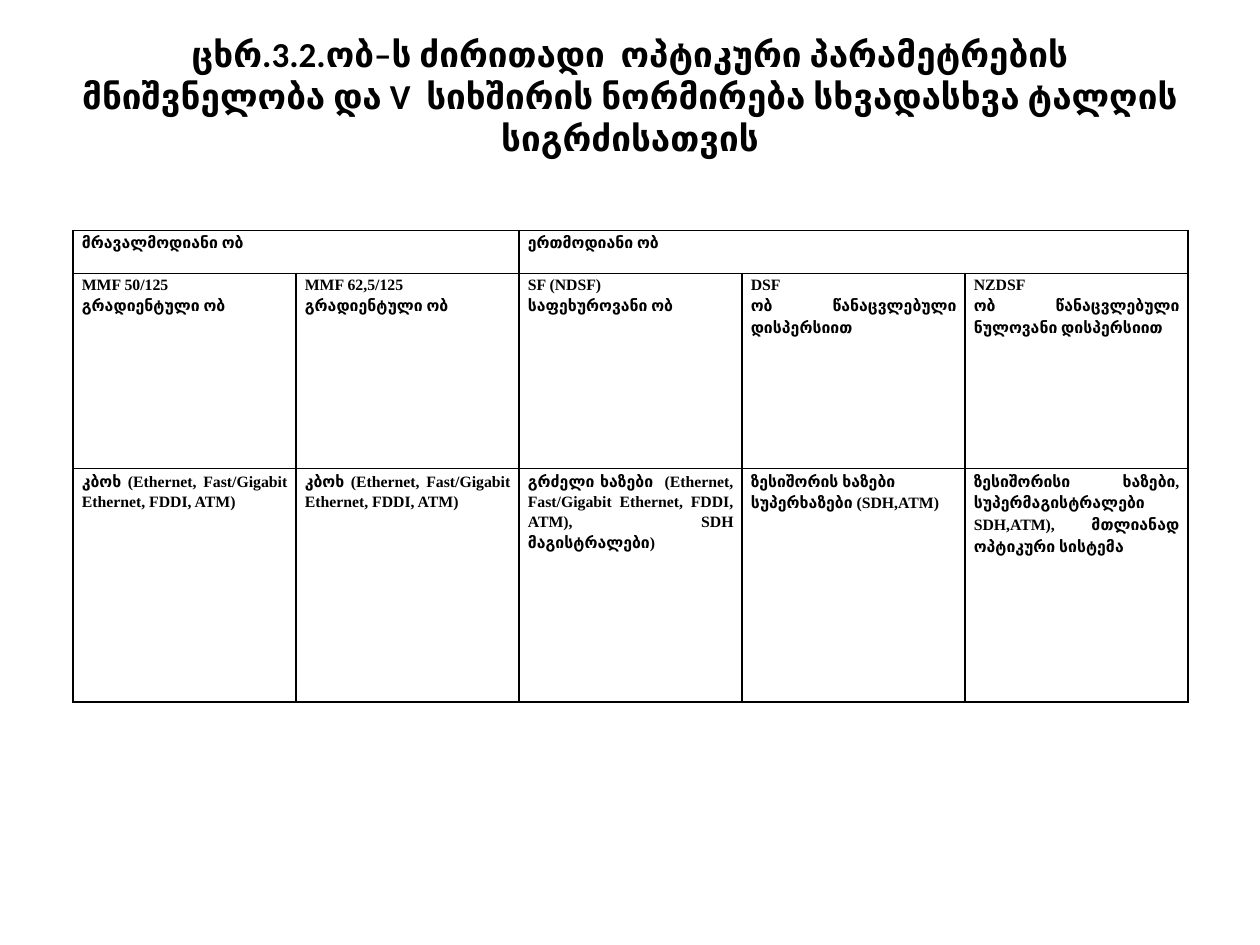
from lxml import etree
from pptx import Presentation
from pptx.dml.color import RGBColor
from pptx.enum.text import MSO_ANCHOR as Anchor, PP_ALIGN as Align
from pptx.oxml.ns import qn
from pptx.util import Inches, Pt

TITLE = ("ცხრ.3.2.ობ–ს ძირითადი  ოპტიკური პარამეტრების მნიშვნელობა "
         "და V  სიხშირის ნორმირება სხვადასხვა ტალღის სიგრძისათვის")

# Each cell is a list of paragraphs, each paragraph a list of spans
NETWORKS = " (Ethernet, Fast/Gigabit Ethernet, FDDI, ATM)"
GRADED = ["გრადიენტული ობ"]
LOCAL_USE = [["კბოხ", NETWORKS]]
GROUPS = [(0, 1, "მრავალმოდიანი ობ"), (2, 4, "ერთმოდიანი ობ")]
FIBRES = [
    [["MMF 50/125"], GRADED],
    [["MMF 62,5/125"], GRADED],
    [["SF (NDSF)"], ["საფეხუროვანი ობ"]],
    [["DSF"], ["ობ წანაცვლებული დისპერსიით"]],
    [["NZDSF"], ["ობ წანაცვლებული ნულოვანი დისპერსიით"]],
]
USES = [
    LOCAL_USE,
    LOCAL_USE,
    [["გრძელი ხაზები ", NETWORKS + ",  SDH ", "მაგისტრალები", ")"]],
    [["ზესიშორის ხაზები"], ["სუპერხაზები", " (SDH,ATM)"]],
    [["ზესიშორისი ხაზები", ",\n", "სუპერმაგისტრალები ", "SDH,ATM), ",
      "მთლიანად ოპტიკური სისტემა"]],
]
COLUMN_WIDTH = 1.77
ROW_HEIGHTS = [0.34, 1.55, 1.85]


def colour(value):
    return RGBColor.from_string(value)


class SlideBuilder:
    ink = "000000"
    title_font = "Calibri"
    georgian_font = "Lato"
    latin_font = "Times New Roman"

    def __init__(self, deck):
        self.page = deck.slides.add_slide(deck.slide_layouts[5])

    def span(self, para, text, font, size):
        span = para.add_run()
        span.text = text
        for name, value in {"name": font, "size": Pt(size), "bold": True}.items():
            setattr(span.font, name, value)
        span.font.color.rgb = colour(self.ink)

    def title(self, text, left, top, width, height):
        box = self.page.shapes.title
        place = {"left": left, "top": top, "width": width, "height": height}
        for name, value in place.items():
            setattr(box, name, Inches(value))
        frame = box.text_frame
        frame.word_wrap = True
        frame.vertical_anchor = Anchor.MIDDLE
        frame.margin_bottom = Inches(0.38)
        para = frame.paragraphs[0]
        para.alignment = Align.CENTER
        self.span(para, text, self.title_font, 20)

    def table(self, left, top, columns, column_width, heights):
        table = self.page.shapes.add_table(
            len(heights), columns, Inches(left), Inches(top),
            Inches(columns * column_width), Inches(sum(heights))).table
        table.first_row = table.horz_banding = False
        for column in table.columns:
            column.width = Inches(column_width)
        for row, height in zip(table.rows, heights):
            row.height = Inches(height)
        for cell in table.iter_cells():
            self.cell_style(cell)
        return table

    def cell_style(self, cell):
        margins = {"left": 0.07, "top": 0, "right": 0.07, "bottom": 0}
        for side, value in margins.items():
            setattr(cell, f"margin_{side}", Inches(value))
        cell.fill.background()
        properties = cell._tc.get_or_add_tcPr()
        for index, side in enumerate("LRTB"):
            line = etree.Element(qn(f"a:ln{side}"), w=str(Pt(1)))
            fill = etree.SubElement(line, qn("a:solidFill"))
            etree.SubElement(fill, qn("a:srgbClr"), val=self.ink)
            properties.insert(index, line)

    def cell_text(self, cell, paragraphs):
        frame = cell.text_frame
        for number, spans in enumerate(paragraphs):
            para = frame.add_paragraph() if number else frame.paragraphs[0]
            para.alignment = Align.JUSTIFY
            para.line_spacing = 1.15
            for text in spans:
                georgian = any("ა" <= letter <= "ჿ" for letter in text)
                font = self.georgian_font if georgian else self.latin_font
                self.span(para, text.rstrip("\n"), font, 9)
                if text.endswith("\n"):
                    para.add_line_break()


def main():
    deck = Presentation()
    deck.slide_width, deck.slide_height = Inches(10), Inches(7.5)
    builder = SlideBuilder(deck)

    # Title
    builder.title(TITLE, 0.5, 0.3, 9, 1.25)

    # Fibre table: merged group headings, then fibre types and their uses
    table = builder.table(0.58, 1.83, len(FIBRES), COLUMN_WIDTH, ROW_HEIGHTS)
    for first, last, heading in GROUPS:
        table.cell(0, first).merge(table.cell(0, last))
        builder.cell_text(table.cell(0, first), [[heading]])
    for row, contents in enumerate([FIBRES, USES], start=1):
        for column, paragraphs in enumerate(contents):
            builder.cell_text(table.cell(row, column), paragraphs)

    deck.save("out.pptx")


if __name__ == "__main__":
    main()
